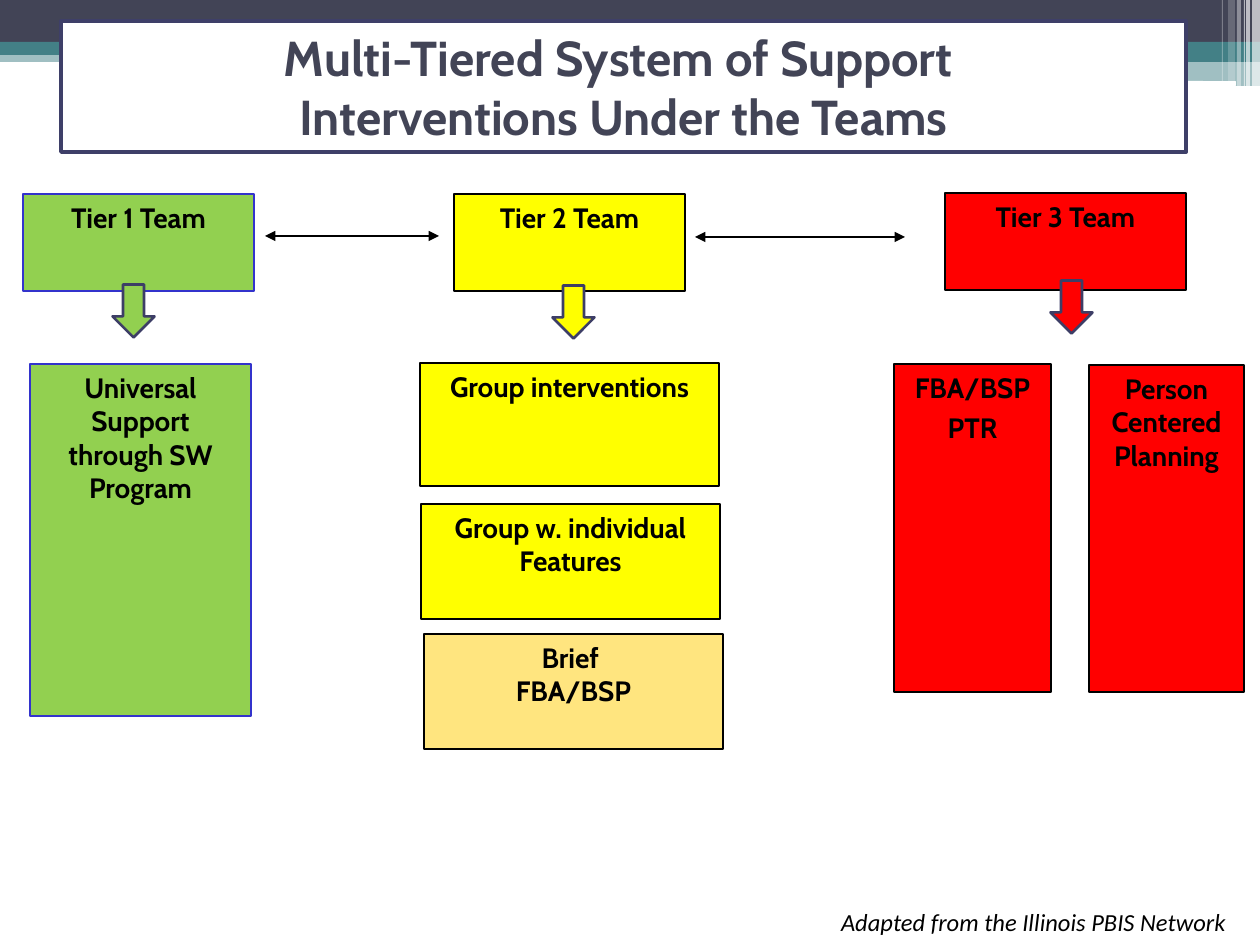
from dataclasses import dataclass
from lxml.etree import SubElement
from pptx import Presentation
from pptx.dml.color import RGBColor as Rgb
from pptx.enum.shapes import MSO_CONNECTOR as Link, MSO_SHAPE as Kind
from pptx.enum.text import MSO_ANCHOR as Anchor, PP_ALIGN as Align
from pptx.oxml.ns import qn
from pptx.util import Pt

SCALE = 914400 / 126


@dataclass(frozen=True)
class Theme:
    """Colours, fonts and type sizes of the slide."""
    navy: str = "424456"
    teal: str = "438086"
    white: str = "FFFFFF"
    black: str = "000000"
    green: str = "92D050"
    yellow: str = "FFFF00"
    gold: str = "FFCC00"
    red: str = "FF0000"
    blue: str = "3333CC"
    frame: str = "3E3F68"
    edge: str = "3D3E66"
    font: str = "Cabin"
    serif: str = "Calibri"
    head: int = 28
    body: int = 16
    note: int = 14


T = Theme()


def px(*vals):
    """Turn pixels into EMU."""
    return [round(v * SCALE) for v in vals]


def shape(slide, at, fill, line=None, width=0.75, alpha=100, kind=Kind.RECTANGLE):
    """Add a filled preset shape."""
    item = slide.shapes.add_shape(kind, *px(*at))
    item.shadow.inherit = False
    item.fill.solid()
    item.fill.fore_color.rgb = Rgb.from_string(fill)
    if alpha < 100:
        tint = item.fill._xPr.find(qn("a:solidFill"))[0]
        SubElement(tint, qn("a:alpha"), val=str(alpha * 1000))
    if line:
        item.line.color.rgb = Rgb.from_string(line)
        item.line.width = Pt(width)
    else:
        item.line.fill.background()
    return item


def write(item, lines, size=T.body, color=T.black, font=T.font,
          align=Align.CENTER, bold=True, italic=False, gap=0):
    """Write one paragraph per line into a shape."""
    frame = item.text_frame
    frame.word_wrap = True
    frame.vertical_anchor = Anchor.TOP
    for i, text in enumerate(lines):
        para = frame.add_paragraph() if i else frame.paragraphs[0]
        para.alignment = align
        if i and gap:
            para.space_before = Pt(gap)
        run = para.add_run()
        run.text = text
        run.font.name, run.font.size = font, Pt(size)
        run.font.bold, run.font.italic = bold, italic
        run.font.color.rgb = Rgb.from_string(color)


def box(slide, at, fill, lines, line=T.black, alpha=100, gap=0):
    """Add a labelled box."""
    write(shape(slide, at, fill, line, alpha=alpha), lines, gap=gap)


def link(slide, left, right, y):
    """Add a level line with an arrowhead at each end."""
    item = slide.shapes.add_connector(Link.STRAIGHT, *px(left, y, right, y))
    item.line.color.rgb = Rgb.from_string(T.black)
    item.line.width = Pt(0.75)
    pen = item.line._get_or_add_ln()
    for end in ("a:headEnd", "a:tailEnd"):
        SubElement(pen, qn(end), type="triangle")
    SubElement(item._element.spPr, qn("a:effectLst"))


def arrow(slide, left, top, fill):
    """Add a block arrow that points down."""
    item = shape(slide, (left, top, 53, 42), fill, T.edge, 1.5, kind=Kind.RIGHT_ARROW)
    item.rotation = 90


def banner(slide):
    """Draw the bands and stripes along the top edge."""
    bands = [
        ((0, 50, 1260, 12), T.teal, 50), ((0, 0, 1260, 43), T.navy, 100),
        ((0, 42, 1260, 13), T.teal, 100), ((746, 49, 514, 13), T.teal, 100),
        ((746, 61, 514, 25), T.teal, 50),
    ]
    for at, fill, alpha in bands:
        shape(slide, at, fill, alpha=alpha)
    shape(slide, (1016, 81, 220, 5), T.white, kind=Kind.ROUNDED_RECTANGLE)
    stripes = [(1252, 8, 86, 65), (1246, 4, 86, 65), (1244, 1, 86, 60),
               (1237, 4, 86, 40), (1228, 7, 81, 20), (1222, 1, 81, 30)]
    for left, width, high, alpha in stripes:
        shape(slide, (left, 0, width, high), T.white, alpha=alpha)


def main():
    """Build and save the slide."""
    deck = Presentation()
    deck.slide_width, deck.slide_height = px(1260, 945)
    slide = deck.slides.add_slide(deck.slide_layouts[6])
    banner(slide)

    title = shape(slide, (61, 21, 1125, 131), T.white, T.frame, 2.25)
    write(title, ["Multi-Tiered System of Support ", "Interventions Under the Teams"],
          T.head, T.navy)

    box(slide, (420, 363, 299, 123), T.yellow, ["Group interventions"])
    box(slide, (421, 504, 299, 115), T.yellow, ["Group w. individual", "Features"])
    box(slide, (424, 634, 299, 115), T.gold, ["Brief ", "FBA/BSP"], alpha=50)
    box(slide, (894, 364, 157, 328), T.red, ["FBA/BSP", "PTR"], gap=4)
    box(slide, (1089, 365, 155, 327), T.red, ["Person Centered Planning"])
    box(slide, (945, 193, 241, 97), T.red, ["Tier 3 Team"])
    box(slide, (454, 194, 231, 97), T.yellow, ["Tier 2 Team"])
    link(slide, 265, 439, 236)
    link(slide, 695, 905, 237)
    box(slide, (23, 194, 231, 97), T.green, ["Tier 1 Team"], T.blue)
    box(slide, (30, 364, 221, 352), T.green,
        ["Universal Support through SW Program"], T.blue)

    note = slide.shapes.add_textbox(*px(718, 901, 526, 43))
    write(note, ["Adapted from the Illinois PBIS Network "], T.note, font=T.serif,
          align=Align.RIGHT, bold=False, italic=True)

    for left, top, fill in ((107, 290, T.green), (547, 291, T.yellow), (1045, 286, T.red)):
        arrow(slide, left, top, fill)
    deck.save("out.pptx")


if __name__ == "__main__":
    main()
